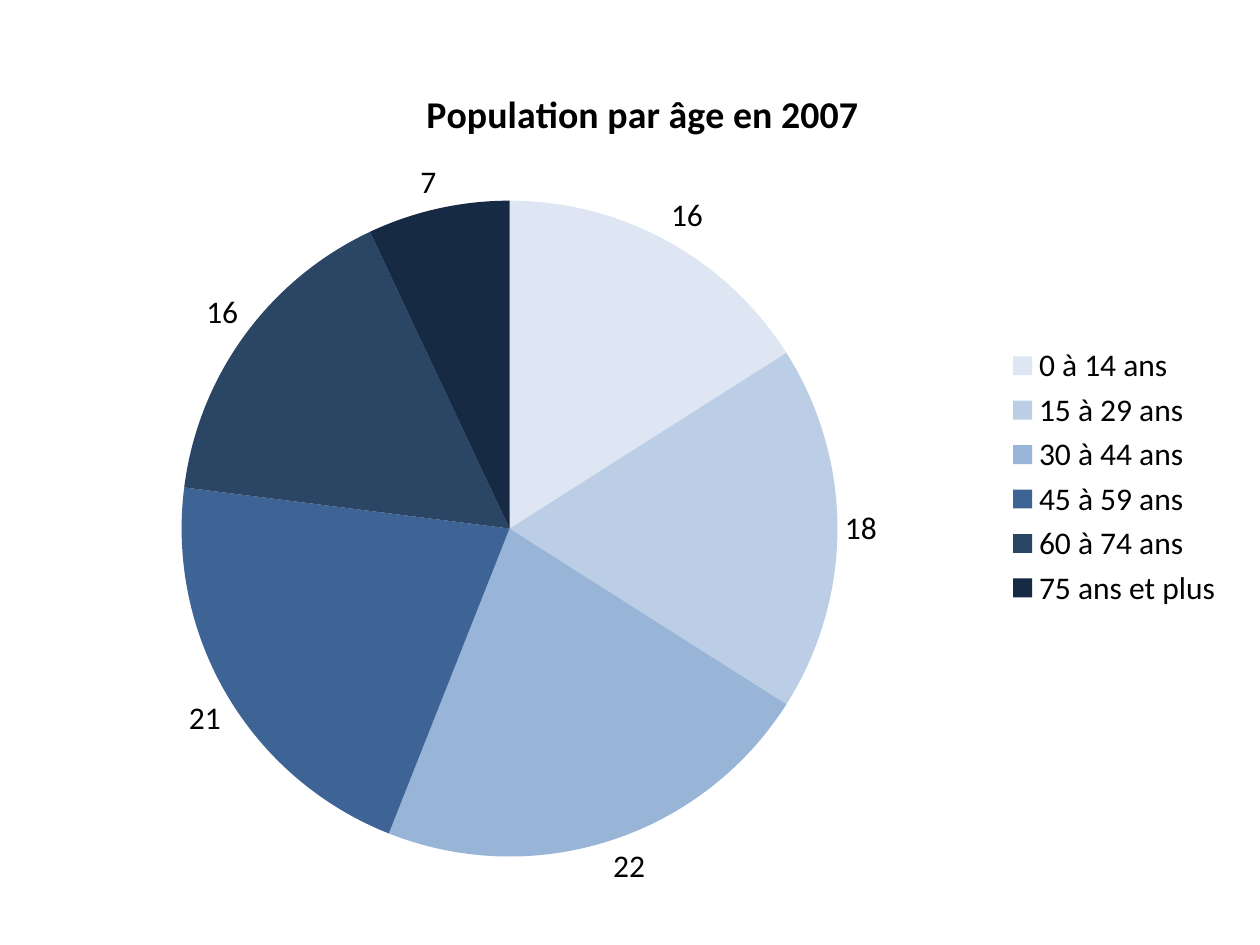
"""Build a slide with a pie chart of the population by age in 2007."""
import pptx
import pptx.chart.data
import pptx.dml.color
import pptx.enum.chart
import pptx.oxml
import pptx.oxml.ns
import pptx.util

Inches = pptx.util.Inches

TITLE = "Population par âge en 2007"
FONT = "Calibri"
COLOURS = {
    "text": "000000",
    "0 à 14 ans": "DCE6F2",
    "15 à 29 ans": "B9CDE5",
    "30 à 44 ans": "95B3D7",
    "45 à 59 ans": "376092",
    "60 à 74 ans": "254061",
    "75 ans et plus": "0F243E",
}
AGES = [
    ("0 à 14 ans", 16),
    ("15 à 29 ans", 18),
    ("30 à 44 ans", 22),
    ("45 à 59 ans", 21),
    ("60 à 74 ans", 16),
    ("75 ans et plus", 7),
]
OPACITY = 97
CHART_BOX = (0.28, 0.36, 9.53, 6.85)
TITLE_LAYOUT = {"x": 0.32, "y": 0.04}
PIE_LAYOUT = {"x": 0.12, "y": 0.18, "w": 0.55, "h": 0.76}


def rgb(name):
    return pptx.dml.color.RGBColor.from_string(COLOURS[name])


def format_font(font, size=18, bold=False, colour="text"):
    font.name = FONT
    font.size = pptx.util.Pt(size)
    font.bold = bold
    font.color.rgb = rgb(colour)


def write_text(frame, text, **style):
    span = frame.paragraphs[0].add_run()
    span.text = text
    format_font(span.font, **style)


def set_layout(parent, position, inner=False):
    for old in parent.findall(pptx.oxml.ns.qn("c:layout")):
        parent.remove(old)
    target = '<c:layoutTarget val="inner"/>' if inner else ""
    modes = "".join(f'<c:{key}Mode val="edge"/>' for key in "xy")
    places = "".join(f'<c:{key} val="{value}"/>' for key, value in position.items())
    layout = pptx.oxml.parse_xml(
        f'<c:layout {pptx.oxml.ns.nsdecls("c")}><c:manualLayout>'
        f"{target}{modes}{places}</c:manualLayout></c:layout>"
    )
    text = parent.find(pptx.oxml.ns.qn("c:tx"))
    parent.insert(0 if text is None else 1, layout)


def colour_slice(point, name):
    point.format.fill.solid()
    point.format.fill.fore_color.rgb = rgb(name)
    point.format.line.fill.background()
    for colour in point.format.fill._xPr.iterfind(".//" + pptx.oxml.ns.qn("a:srgbClr")):
        colour.append(pptx.oxml.parse_xml(
            f'<a:alpha {pptx.oxml.ns.nsdecls("a")} val="{OPACITY * 1000}"/>'
        ))


def add_age_chart(page):
    data = pptx.chart.data.CategoryChartData()
    data.categories = [age for age, _ in AGES]
    data.add_series(TITLE, [share for _, share in AGES])
    chart = page.shapes.add_chart(
        pptx.enum.chart.XL_CHART_TYPE.PIE, *map(Inches, CHART_BOX), data
    ).chart
    format_font(chart.font)

    chart.has_title = True
    write_text(chart.chart_title.text_frame, TITLE, size=21.6, bold=True)
    chart.chart_title.include_in_layout = False
    set_layout(chart.chart_title._element, TITLE_LAYOUT)

    chart.has_legend = True
    chart.legend.position = pptx.enum.chart.XL_LEGEND_POSITION.RIGHT
    chart.legend.include_in_layout = False
    format_font(chart.legend.font)

    plot = chart.plots[0]
    plot.vary_by_categories = True
    plot.has_data_labels = True
    labels = plot.data_labels
    labels.show_value = True
    labels.show_percentage = False
    labels.position = pptx.enum.chart.XL_LABEL_POSITION.OUTSIDE_END
    format_font(labels.font)
    for index, (age, _) in enumerate(AGES):
        colour_slice(plot.series[0].points[index], age)
    set_layout(chart._chartSpace.chart.plotArea, PIE_LAYOUT, inner=True)


def main():
    deck = pptx.Presentation()
    deck.slide_width, deck.slide_height = Inches(10), Inches(7.5)
    page = deck.slides.add_slide(deck.slide_layouts[6])
    add_age_chart(page)
    deck.save("out.pptx")


if __name__ == "__main__":
    main()
